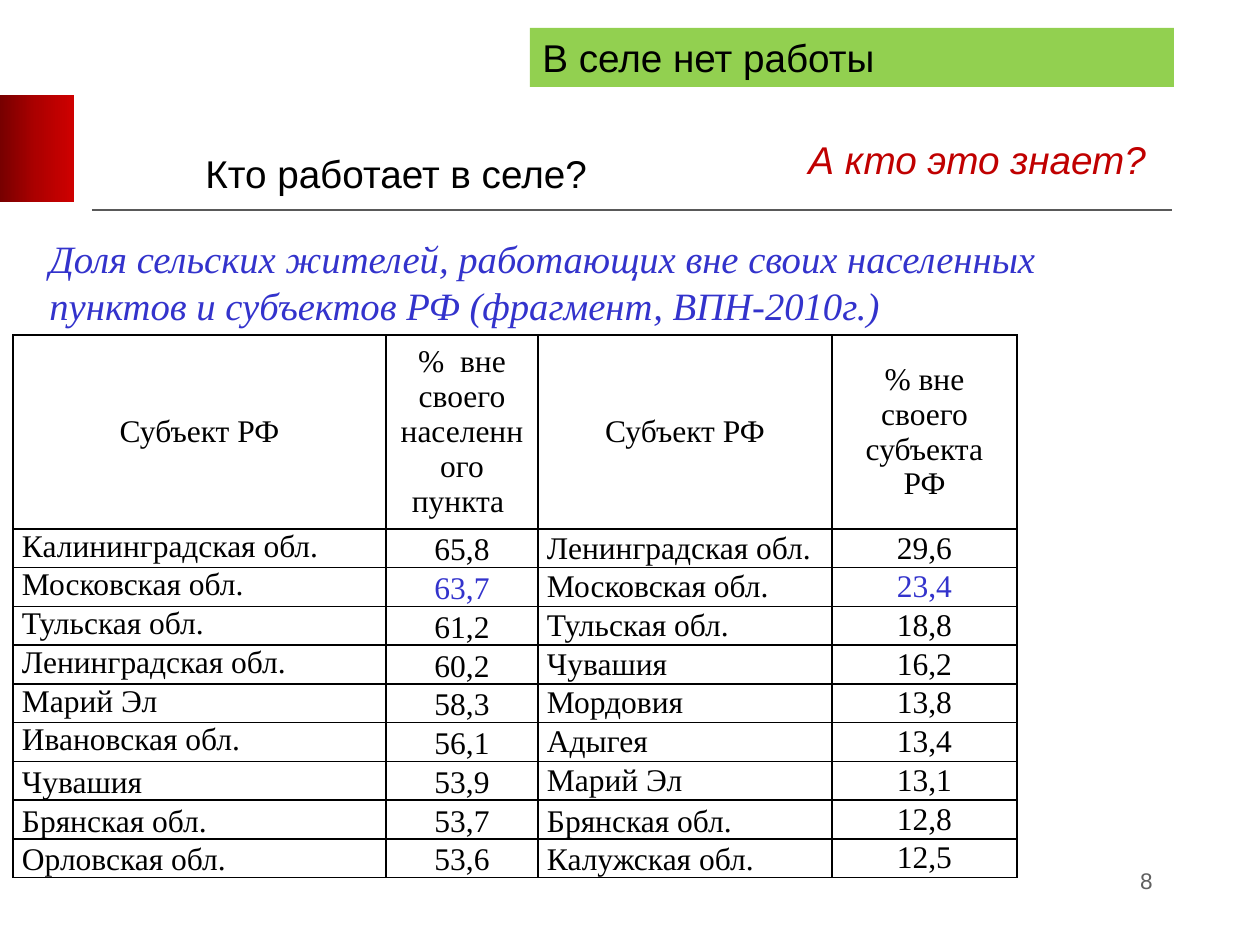
"""Build the slide on rural residents who work outside their home settlements."""
from copy import deepcopy

from lxml import etree
from pptx import Presentation
from pptx import util as u
from pptx.dml.color import RGBColor
from pptx.enum import shapes, text
from pptx.oxml import ns

PX = 914400 / 126
BLACK = RGBColor(0x00, 0x00, 0x00)
BLUE = RGBColor(0x33, 0x33, 0xCC)
RED = RGBColor(0xC0, 0x00, 0x00)
GREEN = RGBColor(0x92, 0xD0, 0x50)
GREY = RGBColor(0x60, 0x60, 0x60)
RULE_GREY = RGBColor(0x59, 0x59, 0x59)
ACCENT_STOPS = [(0, RGBColor(0x77, 0, 0)), (0.5, RGBColor(0xAD, 0, 0)), (1, RGBColor(0xCE, 0, 0))]
LEFT, CENTER, RIGHT = text.PP_ALIGN.LEFT, text.PP_ALIGN.CENTER, text.PP_ALIGN.RIGHT
TOP, MIDDLE, BOTTOM = text.MSO_ANCHOR.TOP, text.MSO_ANCHOR.MIDDLE, text.MSO_ANCHOR.BOTTOM


def px(*lengths):
    return [u.Emu(round(length * PX)) for length in lengths]


def write(frame, words, size, font, color, align=LEFT, italic=False):
    frame.word_wrap = True
    paragraph = frame.paragraphs[0]
    paragraph.alignment = align
    run = paragraph.add_run()
    run.text = words
    run.font.size = u.Pt(size)
    run.font.name = font
    run.font.italic = italic
    run.font.color.rgb = color


deck = Presentation()
deck.slide_width, deck.slide_height = px(1260, 945)
slide = deck.slides.add_slide(deck.slide_layouts[6])

accent = slide.shapes.add_shape(shapes.MSO_SHAPE.RECTANGLE, *px(0, 95, 74, 107))
accent.shadow.inherit = False
accent.line.fill.background()
accent.fill.gradient()
accent.fill.gradient_angle = 0
first_stop = accent._element.spPr.find(".//" + ns.qn("a:gs"))
first_stop.addnext(deepcopy(first_stop))
for stop, (position, color) in zip(accent.fill.gradient_stops, ACCENT_STOPS):
    stop.position = position
    stop.color.rgb = color

rule = slide.shapes.add_connector(shapes.MSO_CONNECTOR.STRAIGHT, *px(92, 210, 1172, 210))
rule.line.color.rgb = RULE_GREY
rule.line.width = u.Pt(1.5)
etree.SubElement(rule._element.spPr, ns.qn("a:effectLst"))

columns = [373, 152, 294, 185]
header_height, row_height = 194, 38.75
header = ["Субъект РФ", "%  вне своего населенного пункта ", "Субъект РФ", "% вне своего субъекта РФ"]
regions = [
    ("Калининградская обл.", "65,8", "Ленинградская обл.", "29,6"),
    ("Московская обл.", "63,7", "Московская обл.", "23,4"),
    ("Тульская обл.", "61,2", "Тульская обл.", "18,8"),
    ("Ленинградская обл.", "60,2", "Чувашия", "16,2"),
    ("Марий Эл", "58,3", "Мордовия", "13,8"),
    ("Ивановская обл.", "56,1", "Адыгея", "13,4"),
    ("Чувашия", "53,9", "Марий Эл", "13,1"),
    ("Брянская обл.", "53,7", "Брянская обл.", "12,8"),
    ("Орловская обл.", "53,6", "Калужская обл.", "12,5"),
]
table_height = header_height + row_height * len(regions)
shares = slide.shapes.add_table(
    len(regions) + 1, len(columns), *px(13, 335, sum(columns), table_height)
).table
shares.first_row = shares.horz_banding = False
for column, width in zip(shares.columns, px(*columns)):
    column.width = width
for row, height in zip(shares.rows, px(header_height, *[row_height] * len(regions))):
    row.height = height

for r, values in enumerate([header, *regions]):
    anchors = [TOP if r < 7 else BOTTOM, BOTTOM, MIDDLE if r < 8 else BOTTOM, MIDDLE]
    for c, value in enumerate(values):
        cell = shares.cell(r, c)
        cell.margin_left, cell.margin_right, cell.margin_top, cell.margin_bottom = px(9, 9, 0, 0)
        cell.vertical_anchor = anchors[c] if r else MIDDLE
        align = CENTER if r == 0 or c % 2 else LEFT
        color = BLUE if r == 2 and c % 2 else BLACK
        write(cell.text_frame, value, 18, "Times New Roman", color, align)
        properties = cell._tc.get_or_add_tcPr()
        for side in ("lnL", "lnR", "lnT", "lnB"):
            border = etree.SubElement(properties, ns.qn("a:" + side), w="12700")
            paint = etree.SubElement(border, ns.qn("a:solidFill"))
            etree.SubElement(paint, ns.qn("a:srgbClr"), val=str(BLACK))
        cell.fill.background()

banner = slide.shapes.add_shape(shapes.MSO_SHAPE.RECTANGLE, *px(530, 28, 644, 59))
banner.shadow.inherit = False
banner.fill.solid()
banner.fill.fore_color.rgb = GREEN
banner.line.fill.background()
banner.text_frame.vertical_anchor = TOP
write(banner.text_frame, "В селе нет работы", 22.1, "Arial", BLACK)

subtitle = "Доля сельских жителей, работающих вне своих населенных пунктов и субъектов РФ (фрагмент, ВПН-2010г.)"
captions = [
    ((903, 861, 262, 63), "8", 12.9, "Arial", GREY, RIGHT, False),
    ((37, 229, 1055, 107), subtitle, 22.1, "Times New Roman", BLUE, LEFT, True),
    ((193, 144, 501, 59), "Кто работает в селе?", 22.1, "Arial", BLACK, LEFT, False),
    ((796, 130, 441, 59), "А кто это знает?", 22.1, "Arial", RED, LEFT, True),
]
for place, *wording in captions:
    caption = slide.shapes.add_textbox(*px(*place))
    write(caption.text_frame, *wording)

deck.save("out.pptx")
